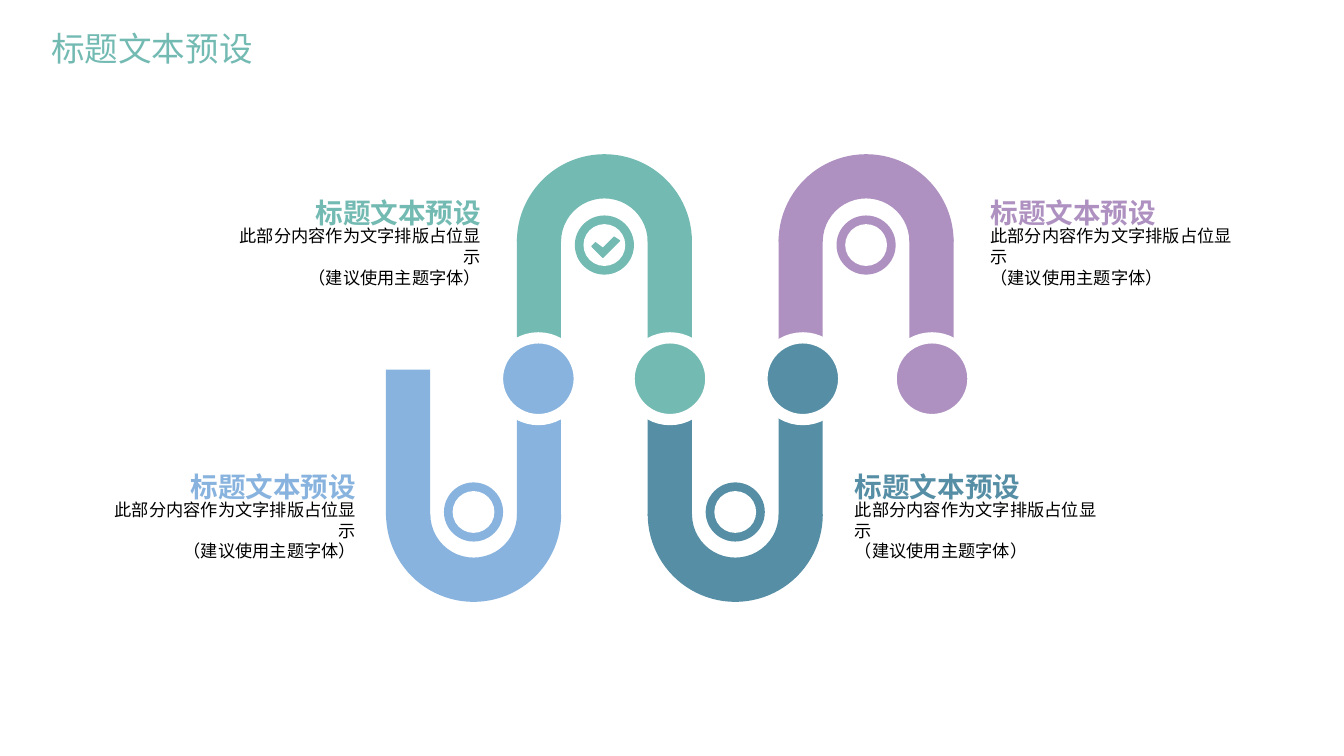
from lxml import etree
from pptx import Presentation
from pptx.dml.color import RGBColor
from pptx.enum.shapes import MSO_SHAPE
from pptx.enum.text import MSO_ANCHOR, PP_ALIGN
from pptx.oxml.ns import qn
from pptx.util import Pt

LEFT, RIGHT = PP_ALIGN.LEFT, PP_ALIGN.RIGHT
TOP, MIDDLE = MSO_ANCHOR.TOP, MSO_ANCHOR.MIDDLE
RECTANGLE, ELLIPSE, ARC = MSO_SHAPE.RECTANGLE, MSO_SHAPE.OVAL, MSO_SHAPE.BLOCK_ARC

BLUE = RGBColor(0x88, 0xB3, 0xDE)
TEAL = RGBColor(0x73, 0xBA, 0xB3)
NAVY = RGBColor(0x55, 0x8E, 0xA5)
PURPLE = RGBColor(0xAE, 0x91, 0xC0)
WHITE = RGBColor(0xFF, 0xFF, 0xFF)
BLACK = RGBColor(0, 0, 0)

HEADING = "标题文本预设"
BODY = "此部分内容作为文字排版占位显示\v（建议使用主题字体）"

presentation = Presentation()
presentation.slide_width, presentation.slide_height = Pt(720), Pt(405)
slide = presentation.slides.add_slide(presentation.slide_layouts[6])


def add_filled(kind, left, top, width, height, color):
    shape = slide.shapes.add_shape(kind, Pt(left), Pt(top), Pt(width), Pt(height))
    shape.shadow.inherit = False
    shape.fill.solid()
    shape.fill.fore_color.rgb = color
    shape.line.fill.background()
    return shape


def add_text(text, box, size, color, align, font_name="Calibri", bold=False,
             wrap=False, anchor=TOP, insets=(5.76, 0)):
    """Add one paragraph, using the font for Latin and East Asian text alike."""
    frame = slide.shapes.add_textbox(*map(Pt, box)).text_frame
    frame.word_wrap = wrap
    frame.vertical_anchor = anchor
    frame.margin_left = frame.margin_right = Pt(insets[0])
    frame.margin_top = frame.margin_bottom = Pt(insets[1])
    paragraph = frame.paragraphs[0]
    paragraph.text = text
    paragraph.alignment = align
    font = paragraph.font
    font.size, font.bold, font.name = Pt(size), bold, font_name
    font.color.rgb = color
    properties = paragraph._p.pPr.find(qn("a:defRPr"))
    etree.SubElement(properties, qn("a:ea"), typeface=font_name)


# Captions: left, top, width, colour, alignment
captions = [
    (121.7, 105.1, 141.8, TEAL, RIGHT),
    (524.9, 105.1, 145.4, PURPLE, LEFT),
    (54.7, 251.6, 141.8, BLUE, RIGHT),
    (452.2, 251.6, 145.4, NAVY, LEFT),
]
for left, top, width, color, align in captions:
    add_text(BODY, (left, top + 15.1, width, 34.6), 9.2, BLACK, align,
             wrap=True, anchor=MIDDLE)
    add_text(HEADING, (left, top, width, 14.4), 14.8, color, align, bold=True)

# Winding band: each bend starts one leg further right, alternately low and high
BAND_LEFT, PITCH, LEG_WIDTH, LEG_HEIGHT = 206.8, 70.1, 23.7, 78.5
BEND_SIZE = PITCH + LEG_WIDTH
bends = [(BLUE, True), (TEAL, False), (NAVY, True), (PURPLE, False)]
for index, (color, low) in enumerate(bends):
    left = BAND_LEFT + index * PITCH
    bend = add_filled(ARC, left, 228.6 if low else 82.6, BEND_SIZE, BEND_SIZE, color)
    bend.adjustments[2] = LEG_WIDTH / BEND_SIZE
    bend.rotation = 180 if low else 0
    for leg_left in (left, left + PITCH):
        add_filled(RECTANGLE, leg_left, 198 if low else 128.2, LEG_WIDTH, LEG_HEIGHT, color)

# Joints between the bends
JOINT_SIZE = 43.8
for left, color in [(266.5, BLUE), (337, TEAL), (408.2, NAVY), (477.4, PURPLE)]:
    joint = add_filled(ELLIPSE, left, 181, JOINT_SIZE, JOINT_SIZE, color)
    joint.line.color.rgb = WHITE
    joint.line.width = Pt(6)

# Badges inside the bends, each with a plain white disc
BADGE_SIZE, DISC_SIZE = 31.7, 22.4
for index, (color, low) in enumerate(bends):
    center_x = BAND_LEFT + index * PITCH + BEND_SIZE / 2
    center_y = 274.3 if low else 131.3
    for size, fill in ((BADGE_SIZE, color), (DISC_SIZE, WHITE)):
        add_filled(ELLIPSE, center_x - size / 2, center_y - size / 2, size, size, fill)

# Check mark on the teal badge
check_points = [(316.6, 132), (319, 129.6), (322.8, 133.2), (329.4, 126.6),
                (331.9, 129), (322.8, 137.8)]
builder = slide.shapes.build_freeform(*check_points[0], scale=Pt(1))
builder.add_line_segments(check_points[1:], close=True)
check = builder.convert_to_shape()
check.shadow.inherit = False
check.fill.solid()
check.fill.fore_color.rgb = TEAL
check.line.color.rgb = TEAL
check.line.width = Pt(0.5)

add_text(HEADING, (-2.9, 11.5, 145.4, 38.2), 18, TEAL, RIGHT,
         font_name="Noto Sans CJK SC", insets=(7.2, 3.6))

presentation.save("out.pptx")
